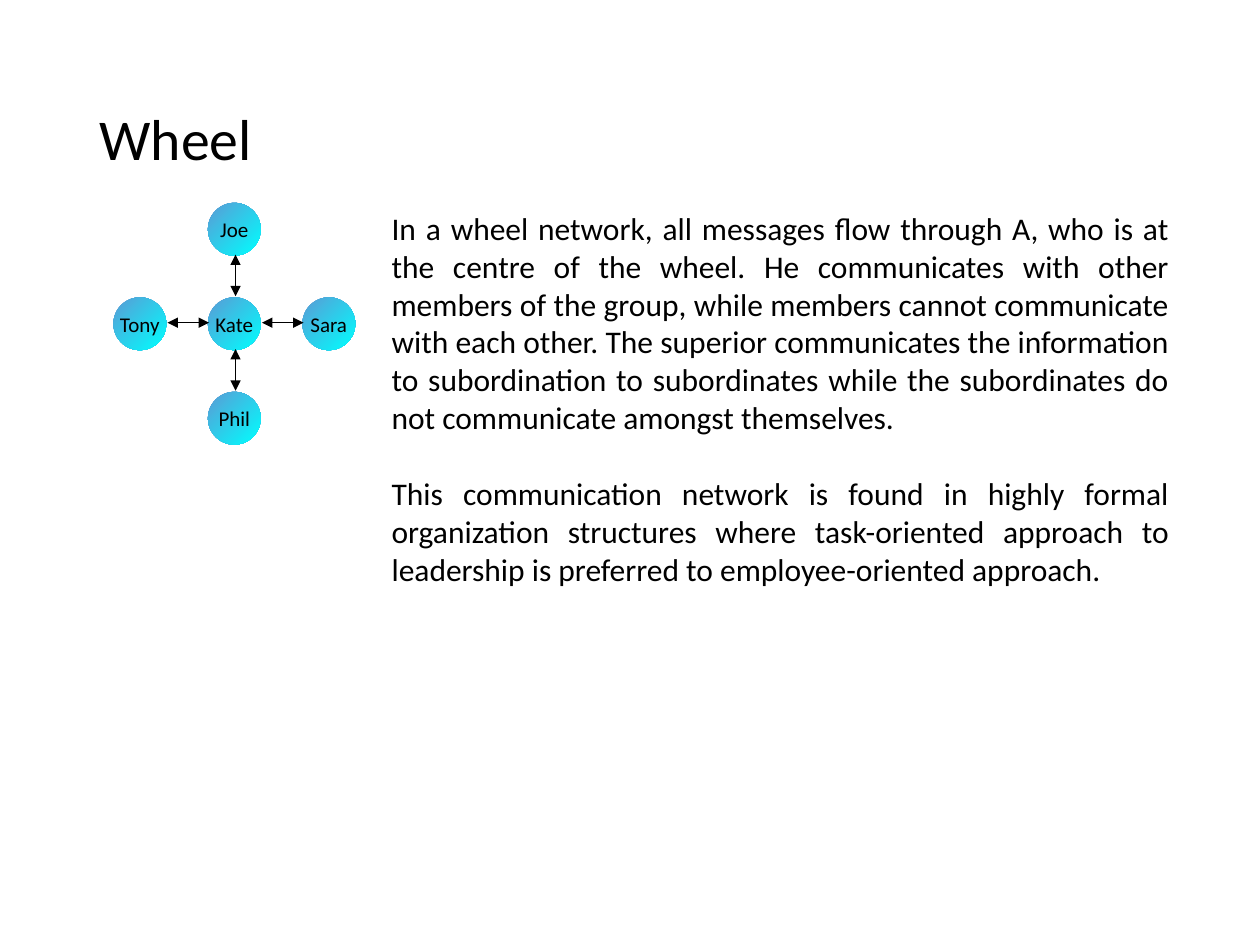
from lxml import etree
from pptx import Presentation
from pptx import util as u
from pptx.dml.color import RGBColor
from pptx.enum import shapes, text
from pptx.oxml import ns

TITLE = "Wheel"
BODY = [
    "In a wheel network, all messages flow through A, who is at the centre of the wheel. "
    "He communicates with other members of the group, while members cannot communicate "
    "with each other. The superior communicates the information to subordination to "
    "subordinates while the subordinates do not communicate amongst themselves.",
    "This communication network is found in highly formal organization structures where "
    "task-oriented approach to leadership is preferred to employee-oriented approach.",
]
HUB = "Kate"
SPOKES = [("Joe", 0, -1), ("Tony", -1, 0), ("Sara", 1, 0), ("Phil", 0, 1)]

THEME = {
    "font": "Calibri", "ink": "000000", "fade": ("5B9BD5", "00FFFF"),
    "title": 33, "body": 18, "node": 12, "line": 0.75,
}
MID = (133.9, 185)
AXIS = (134.6, 184.4)
SIZE, STEP = 30.2, 54


def color(name):
    return RGBColor.from_string(name)


def write(frame, lines, size, box, para):
    for key, val in box.items():
        setattr(frame, key, val)
    for i, line in enumerate(lines):
        p = frame.add_paragraph() if i else frame.paragraphs[0]
        for key, val in para.items():
            setattr(p, key, val)
        if i:
            p.space_before = u.Pt(22)
        run = p.add_run()
        run.text = line
        for key, val in {"name": THEME["font"], "size": u.Pt(size)}.items():
            setattr(run.font, key, val)
        run.font.color.rgb = color(THEME["ink"])


def label(slide, area, lines, size, box, para):
    shape = slide.shapes.add_textbox(*map(u.Pt, area))
    write(shape.text_frame, lines, size, {"word_wrap": True, **box}, para)


def node(slide, name, dx=0, dy=0):
    left, top = (m + d * STEP - SIZE / 2 for m, d in zip(MID, (dx, dy)))
    shape = slide.shapes.add_shape(
        shapes.MSO_SHAPE.OVAL, *map(u.Pt, (left, top, SIZE, SIZE)))
    shape.shadow.inherit = False
    shape.line.fill.background()
    shape.fill.gradient()
    shape.fill.gradient_angle = 315
    for stop, tone in zip(shape.fill.gradient_stops, THEME["fade"]):
        stop.color.rgb = color(tone)
    write(shape.text_frame, [name], THEME["node"],
          {"word_wrap": False, "vertical_anchor": text.MSO_ANCHOR.MIDDLE},
          {"alignment": text.PP_ALIGN.CENTER})


def arrow(slide, dx, dy):
    ends = [a + d * far for far in (SIZE / 2, STEP - SIZE / 2)
            for a, d in zip(AXIS, (dx, dy))]
    link = slide.shapes.add_connector(
        shapes.MSO_CONNECTOR.STRAIGHT, *map(u.Pt, ends))
    link.line.width = u.Pt(THEME["line"])
    link.line.color.rgb = color(THEME["ink"])
    pen = link.line._get_or_add_ln()
    for tag in ("a:headEnd", "a:tailEnd"):
        etree.SubElement(pen, ns.qn(tag), type="triangle")
    etree.SubElement(link._element.spPr, ns.qn("a:effectLst"))


def main():
    deck = Presentation()
    deck.slide_width, deck.slide_height = u.Pt(720), u.Pt(540)
    slide = deck.slides.add_slide(deck.slide_layouts[6])
    label(slide, (49.7, 28.8, 620.6, 104.4), [TITLE], THEME["title"],
          {"vertical_anchor": text.MSO_ANCHOR.MIDDLE}, {"line_spacing": 0.9})
    node(slide, HUB)
    for name, dx, dy in SPOKES:
        node(slide, name, dx, dy)
    for name, dx, dy in SPOKES:
        arrow(slide, dx, dy)
    label(slide, (216.7, 115.9, 458.6, 225.4), BODY, THEME["body"],
          {"auto_size": text.MSO_AUTO_SIZE.SHAPE_TO_FIT_TEXT},
          {"alignment": text.PP_ALIGN.JUSTIFY})
    deck.save("out.pptx")


if __name__ == "__main__":
    main()
